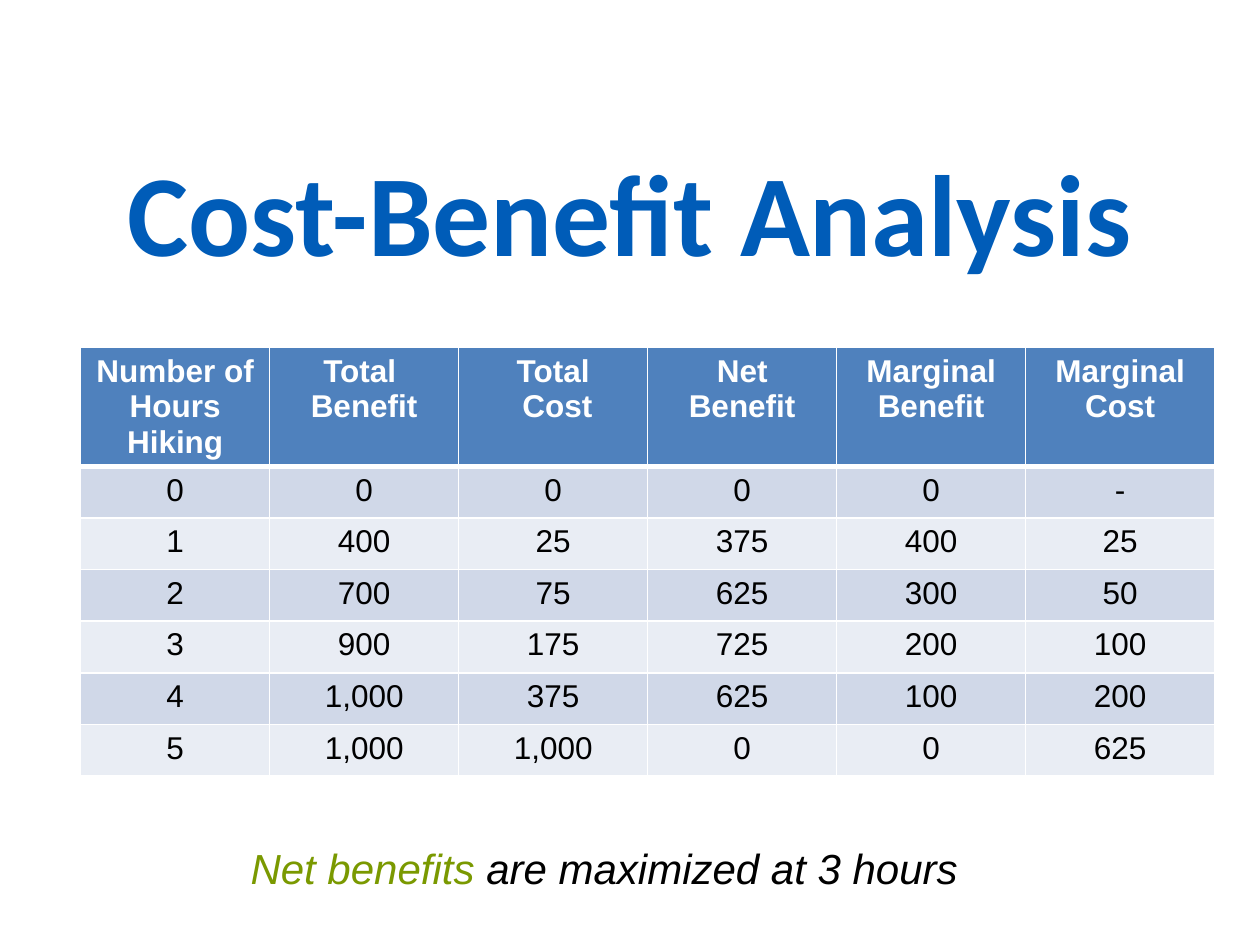
from dataclasses import dataclass

from lxml import etree
from pptx import Presentation
from pptx.dml.color import RGBColor
from pptx.enum import text as t
from pptx.oxml import ns
from pptx.util import Inches, Pt


@dataclass(frozen=True)
class Theme:
    title: str = "005CB8"
    accent: str = "7A9900"
    ink: str = "000000"
    white: str = "FFFFFF"
    header: str = "4F81BD"
    bands: tuple = ("D0D8E8", "E9EDF4")
    title_font: str = "Calibri"
    body_font: str = "Arial"
    title_size: int = 66
    note_size: int = 24
    table_size: int = 18


THEME = Theme()
HEADERS = ["Number of Hours Hiking", "Total \nBenefit", "Total\n Cost",
           "Net\nBenefit", "Marginal\nBenefit", "Marginal Cost"]
HOURS = [
    ["0", "0", "0", "0", "0", "-"],
    ["1", "400", "25", "375", "400", "25"],
    ["2", "700", "75", "625", "300", "50"],
    ["3", "900", "175", "725", "200", "100"],
    ["4", "1,000", "375", "625", "100", "200"],
    ["5", "1,000", "1,000", "0", "0", "625"],
]


def write(paragraph, wording, *, size, color, font=THEME.body_font,
          bold=False, italic=False, align=None):
    """Append one formatted run to the paragraph."""
    if align is not None:
        paragraph.alignment = align
    run = paragraph.add_run()
    run.text = wording
    run.font.name, run.font.size = font, Pt(size)
    run.font.bold, run.font.italic = bold, italic
    run.font.color.rgb = RGBColor.from_string(color)


def add_title(slide, wording):
    title = slide.shapes.title
    title.left, title.top = Inches(0.5), Inches(1.2)
    title.width, title.height = Inches(9), Inches(1.25)
    frame = title.text_frame
    frame.auto_size = t.MSO_AUTO_SIZE.NONE
    frame.vertical_anchor = t.MSO_ANCHOR.MIDDLE
    heading = frame.paragraphs[0]
    heading.line_spacing = Pt(57)
    write(heading, wording, size=THEME.title_size, color=THEME.title,
          font=THEME.title_font, bold=True, align=t.PP_ALIGN.CENTER)


def add_borders(cell, **widths):
    """Draw white borders; widths are points keyed by side, L, R, T or B."""
    properties = cell._tc.get_or_add_tcPr()
    for side, width in widths.items():
        line = etree.SubElement(properties, ns.qn(f"a:ln{side}"), w=str(Pt(width)))
        fill = etree.SubElement(line, ns.qn("a:solidFill"))
        etree.SubElement(fill, ns.qn("a:srgbClr"), val=THEME.white)


def fill_cell(cell, wording, fill, *, top=1, bottom=1, **style):
    add_borders(cell, L=1, R=1, T=top, B=bottom)
    cell.fill.solid()
    cell.fill.fore_color.rgb = RGBColor.from_string(fill)
    frame = cell.text_frame
    for index, part in enumerate(wording.split("\n")):
        paragraph = frame.add_paragraph() if index else frame.paragraphs[0]
        write(paragraph, part, size=THEME.table_size,
              align=t.PP_ALIGN.CENTER, **style)


def add_hours_table(slide):
    header_height, row_height = Inches(0.93), Inches(0.41)
    table = slide.shapes.add_table(
        len(HOURS) + 1, len(HEADERS), Inches(0.64), Inches(2.76), Inches(9),
        header_height + row_height * len(HOURS)).table
    for row in table.rows:
        row.height = row_height
    table.rows[0].height = header_height
    for column, header in enumerate(HEADERS):
        fill_cell(table.cell(0, column), header, THEME.header, bottom=3,
                  color=THEME.white, bold=True)
    for row, values in enumerate(HOURS, start=1):
        band = THEME.bands[(row - 1) % 2]
        for column, value in enumerate(values):
            fill_cell(table.cell(row, column), value, band,
                      top=3 if row == 1 else 1, color=THEME.ink)


def add_conclusion(slide, subject, statement):
    conclusion = slide.shapes.add_textbox(
        Inches(1.89), Inches(6.64), Inches(7.4), Inches(0.5))
    frame = conclusion.text_frame
    frame.word_wrap = True
    frame.auto_size = t.MSO_AUTO_SIZE.SHAPE_TO_FIT_TEXT
    for wording, color in ((subject, THEME.accent), (statement, THEME.ink)):
        write(frame.paragraphs[0], wording, size=THEME.note_size,
              color=color, italic=True)


def main():
    deck = Presentation()
    deck.slide_width, deck.slide_height = Inches(10), Inches(7.5)
    slide = deck.slides.add_slide(deck.slide_layouts.get_by_name("Title Only"))
    add_title(slide, "Cost-Benefit Analysis")
    add_hours_table(slide)
    add_conclusion(slide, "Net benefits ", "are maximized at 3 hours")
    deck.save("out.pptx")


if __name__ == "__main__":
    main()
